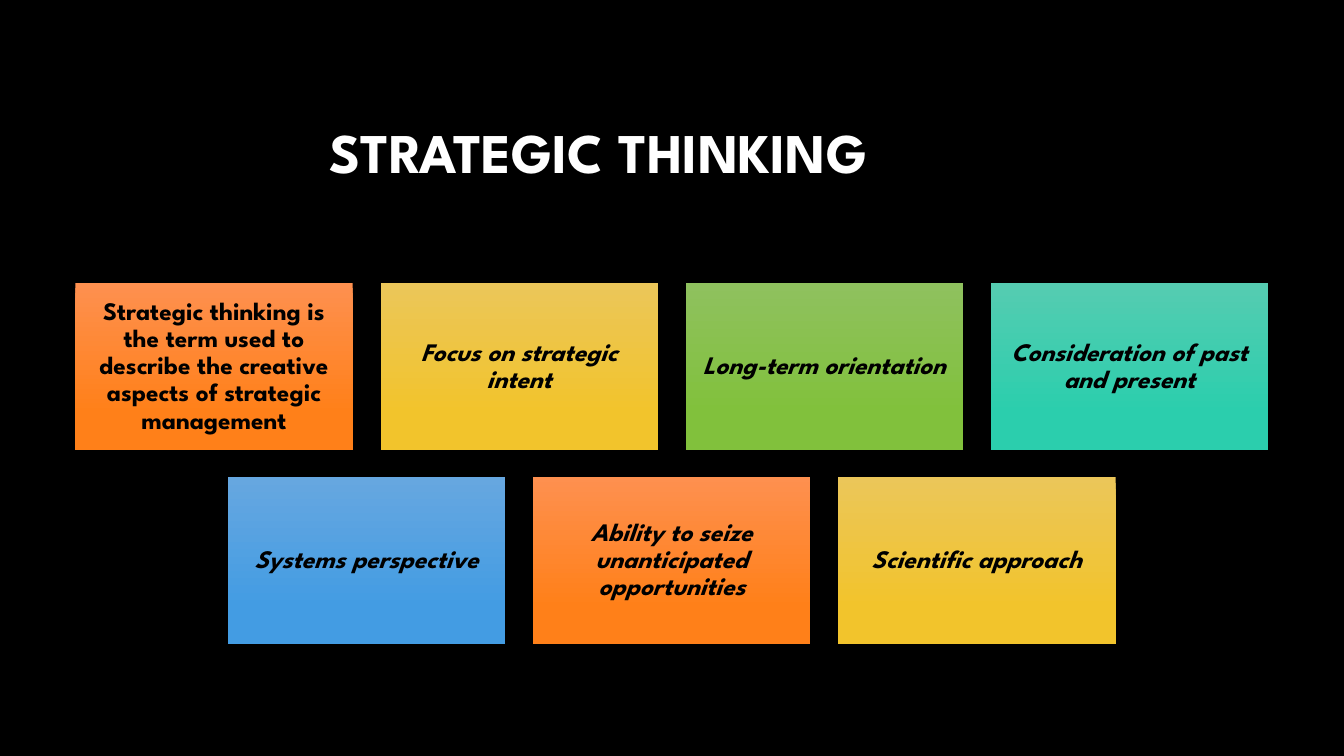
import pptx
import pptx.dml.color
import pptx.enum.shapes
import pptx.enum.text
import pptx.util

Cm = pptx.util.Cm
Align = pptx.enum.text.PP_ALIGN


def color(hex_text):
    return pptx.dml.color.RGBColor.from_string(hex_text)


def write(box, text, size, fill, align=Align.LEFT, italic=False, inset=0.25):
    """Fill a box with one bold, vertically centred paragraph; inset is in cm."""
    frame = box.text_frame
    frame.word_wrap = True
    frame.vertical_anchor = pptx.enum.text.MSO_ANCHOR.MIDDLE
    frame.margin_left = frame.margin_right = Cm(inset)
    frame.margin_top = frame.margin_bottom = Cm(min(inset, 0.18))
    para = frame.paragraphs[0]
    para.alignment = align
    para.line_spacing = 0.9
    span = para.add_run()
    span.text = text
    span.font.name = "League Spartan"
    span.font.size = pptx.util.Pt(size)
    span.font.bold = True
    span.font.italic = italic
    span.font.color.rgb = color(fill)


deck = pptx.Presentation()
deck.slide_width = Cm(33.87)
deck.slide_height = Cm(19.05)
page = deck.slides.add_slide(deck.slide_layouts[6])
page.background.fill.solid()
page.background.fill.fore_color.rgb = color("000000")

title = page.shapes.add_textbox(Cm(8.05), Cm(2.13), Cm(23.93), Cm(3.58))
write(title, "STRATEGIC THINKING", size=40, fill="FFFFFF")

# Gradient from top to bottom
ORANGE = ("FE904F", "FF8019")
YELLOW = ("EBC659", "F2C42C")
GREEN = ("8FC15E", "81C13C")
TEAL = ("55CCB1", "2BCEAD")
BLUE = ("66A7E0", "439CE3")

# Text, gradient, italic
card_rows = [
    [
        ("Strategic thinking is the term used to describe the creative "
         "aspects of strategic management", ORANGE, False),
        ("Focus on strategic intent", YELLOW, True),
        ("Long-term orientation", GREEN, True),
        ("Consideration of past and present", TEAL, True),
    ],
    [
        ("Systems perspective", BLUE, True),
        ("Ability to seize unanticipated opportunities", ORANGE, True),
        ("Scientific approach", YELLOW, True),
    ],
]

CARD_WIDTH, CARD_HEIGHT, GAP = 6.99, 4.19, 0.7
CENTER, FIRST_TOP = 16.93, 7.14

for row, cards in enumerate(card_rows):
    row_width = len(cards) * (CARD_WIDTH + GAP) - GAP
    top = FIRST_TOP + row * (CARD_HEIGHT + GAP)
    for column, (text, gradient, italic) in enumerate(cards):
        left = CENTER - row_width / 2 + column * (CARD_WIDTH + GAP)
        card = page.shapes.add_shape(
            pptx.enum.shapes.MSO_SHAPE.RECTANGLE,
            Cm(left), Cm(top), Cm(CARD_WIDTH), Cm(CARD_HEIGHT))
        card.shadow.inherit = False
        card.line.fill.background()
        card.fill.gradient()
        card.fill.gradient_angle = 270
        for stop, shade, position in zip(card.fill.gradient_stops, gradient, (0, 0.78)):
            stop.color.rgb = color(shade)
            stop.position = position
        write(card, text, size=18, fill="000000", align=Align.CENTER,
              italic=italic, inset=0.18)

deck.save("out.pptx")
